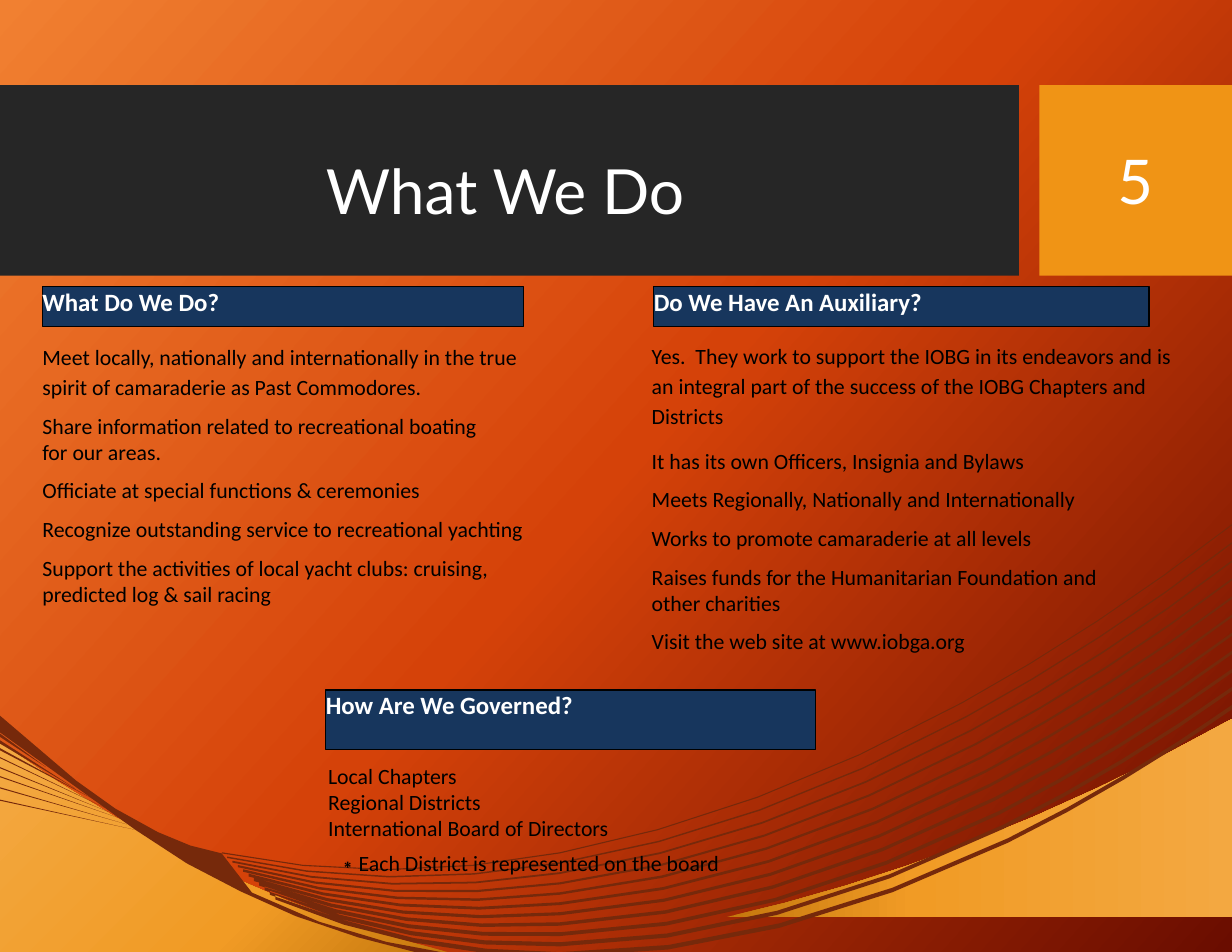
from copy import deepcopy

from lxml import etree
from pptx import Presentation
from pptx.dml.color import RGBColor
from pptx.enum.shapes import MSO_SHAPE
from pptx.enum.text import MSO_ANCHOR, MSO_AUTO_SIZE, PP_ALIGN
from pptx.oxml.ns import qn
from pptx.util import Cm, Pt

RECTANGLE = MSO_SHAPE.RECTANGLE
TOP, MIDDLE = MSO_ANCHOR.TOP, MSO_ANCHOR.MIDDLE
LEFT, CENTER = PP_ALIGN.LEFT, PP_ALIGN.CENTER
NO_AUTOFIT = MSO_AUTO_SIZE.NONE

COLORS = {
    "white": "FFFFFF", "black": "000000", "charcoal": "262626",
    "amber": "F09415", "navy": "17365D", "brown": "76290B",
}
BACKGROUND_STOPS = [(0, "F18031"), (0.5, "D54209"), (1, "6A0D00")]
CORNER_STOPS = [(0, "C4770D"), (0.37, "F19B25"), (1, "F3A841")]

# Wave points are in units of 2.54 cm.
WAVE_UNIT = Cm(2.54)
LEFT_CORNER = [(4.03, 8.51), (2.76, 8.2), (1.38, 7.62), (0, 6.63)]
RIGHT_CORNER = [(11, 6.42), (9.38, 7.32), (7.88, 7.88), (6.48, 8.19)]
WEDGE = [
    (0, 6.39), (0.68, 6.97), (1.03, 7.22), (1.41, 7.43), (1.7, 7.55),
    (1.98, 7.62), (2.25, 7.97), (2.85, 8.23), (3.45, 8.41), (4.04, 8.52),
    (3.78, 8.52), (3.2, 8.37), (2.64, 8.18), (2.15, 7.96), (1.67, 7.71),
    (1.21, 7.41), (0, 6.54),
]
# Top and bottom at the left edge, then the tip.
LEFT_STRANDS = [
    (6.55, 6.58, 0.41, 6.85), (6.61, 6.64, 0.67, 7.04),
    (6.68, 6.7, 0.86, 7.15), (6.76, 6.77, 0.93, 7.21),
    (6.85, 6.86, 0.97, 7.25), (6.93, 6.94, 1.05, 7.3),
    (7.03, 7.04, 1.13, 7.36), (7.14, 7.15, 1.21, 7.41),
]
HIGH_STRAND = [
    (1.98, 7.62), (2.93, 7.82), (3.95, 7.82), (5, 7.62), (6.15, 7.4),
    (7.36, 6.96), (8.59, 6.28), (9.39, 5.84), (10.2, 5.31), (11, 4.69),
]
LOW_STRAND = [
    (2.41, 7.99), (3.23, 8.32), (4.09, 8.47), (5, 8.45), (6.26, 8.43),
    (7.59, 8.07), (8.96, 7.4), (9.68, 7.04), (10.37, 6.62), (11, 6.17),
]
STRAND_COUNT = 11

HEADINGS = [
    ("What Do We Do?", (0.96, 6.5, 10.92, 0.91)),
    ("Do We Have An Auxiliary?", (14.83, 6.5, 11.23, 0.91)),
    ("How Are We Governed?", (7.39, 15.65, 11.1, 1.35)),
]
# Each line: text, line spacing, space before, then paragraph options.
ACTIVITIES = [
    ("Meet locally, nationally and internationally in the true spirit of "
     "camaraderie as Past Commodores.", 1.14, 0),
    ("Share information related to recreational boating for our areas.", 1, 8, {"right": 1.5}),
    ("Officiate at special functions & ceremonies", 1, 8),
    ("Recognize outstanding service to recreational yachting", 1, 8),
    ("Support the activities of local yacht clubs: cruising, predicted log "
     "& sail racing", 1, 8),
]
AUXILIARY = [
    ("Yes.  They work to support the IOBG in its endeavors and is an integral "
     "part of the success of the IOBG Chapters and Districts", 1.14, 0),
    ("It has its own Officers, Insignia and Bylaws", 1, 12),
    ("Meets Regionally, Nationally and Internationally", 1, 8),
    ("Works to promote camaraderie at all levels", 1, 8),
    ("Raises funds for the Humanitarian Foundation and other charities", 1, 8, {"right": 1.5}),
    ("Visit the web site at www.iobga.org", 1, 8),
]
GOVERNANCE = [
    ("Local Chapters", 1.25, 0),
    ("Regional Districts", 1, 0),
    ("International Board of Directors", 1, 0),
    ("Each District is represented on the board", 1.35, 0, {"bullet": "∗"}),
]


def curve(points, steps):
    """Sample a chain of cubic Bezier segments."""
    samples = [points[0]]
    for first in range(0, len(points) - 1, 3):
        a, b, c, d = points[first:first + 4]
        for step in range(1, steps + 1):
            t = step / steps
            u = 1 - t
            samples.append(tuple(
                u**3 * a[k] + 3 * u * u * t * b[k] + 3 * u * t * t * c[k] + t**3 * d[k]
                for k in (0, 1)))
    return samples


def right_strand(number):
    """Return a thin band between the high and low strands, thicker lower down."""
    share = number / 9
    lower = curve([
        (x + (low_x - x) * share, y + (low_y - y) * share)
        for (x, y), (low_x, low_y) in zip(HIGH_STRAND, LOW_STRAND)], 4)
    thickness = 0.01 + 0.003 * number
    return lower + [(x, y - thickness) for x, y in reversed(lower)]


class SlideBuilder:
    def __init__(self, presentation, layout):
        self.slide = presentation.slides.add_slide(layout)
        self.shapes = self.slide.shapes

    def style_font(self, paragraph, size, color, name="Calibri", bold=False):
        font = paragraph.font
        font.size, font.name, font.bold = Pt(size), name, bold
        font.color.rgb = RGBColor.from_string(COLORS[color])

    def gradient(self, fill, element, stops, angle):
        """Apply three stops; the angle runs clockwise in degrees."""
        fill.gradient()
        fill.gradient_angle = (360 - angle) % 360
        stop_list = element.find(".//" + qn("a:gsLst"))
        stop_list.append(deepcopy(stop_list[0]))
        for stop, (position, color) in zip(fill.gradient_stops, stops):
            stop.position = position
            stop.color.rgb = RGBColor.from_string(color)

    def outline(self, contours):
        builder = None
        for contour in contours:
            start, *rest = [(x * 1000, y * 1000) for x, y in contour]
            if builder is None:
                builder = self.shapes.build_freeform(*start, scale=WAVE_UNIT / 1000)
            else:
                builder.move_to(*start)
            builder.add_line_segments(rest, close=True)
        shape = builder.convert_to_shape()
        shape.shadow.inherit = False
        shape.line.fill.background()
        return shape

    def corner(self, points, angle):
        shape = self.outline([points])
        self.gradient(shape.fill, shape.element, CORNER_STOPS, angle)

    def strands(self, contours):
        fill = self.outline(contours).fill
        fill.solid()
        fill.fore_color.rgb = RGBColor.from_string(COLORS["brown"])

    def box(self, place, color, border=None):
        shape = self.shapes.add_shape(RECTANGLE, *map(Cm, place))
        shape.shadow.inherit = False
        shape.fill.solid()
        shape.fill.fore_color.rgb = RGBColor.from_string(COLORS[color])
        if border:
            shape.line.color.rgb = RGBColor.from_string(COLORS[border])
            shape.line.width = Pt(0.75)
        else:
            shape.line.fill.background()
        return shape

    def frame(self, shape, anchor, margin=None):
        frame = shape.text_frame
        frame.word_wrap, frame.auto_size, frame.vertical_anchor = True, NO_AUTOFIT, anchor
        if margin is not None:
            frame.margin_left = frame.margin_right = Cm(margin)
            frame.margin_top = frame.margin_bottom = Cm(margin)
        return frame

    def placeholder(self, index, place):
        """Move a placeholder into position, in front of the shapes drawn so far."""
        shape = self.slide.placeholders[index]
        shape.left, shape.top, shape.width, shape.height = map(Cm, place)
        shape.element.getparent().append(shape.element)
        return shape

    def large_text(self, shape, text, size):
        paragraph = self.frame(shape, MIDDLE).paragraphs[0]
        paragraph.text, paragraph.alignment = text, CENTER
        self.style_font(paragraph, size, "white", "Lato")

    def heading(self, text, place):
        paragraph = self.frame(self.box(place, "navy", "black"), TOP, 0).paragraphs[0]
        paragraph.text, paragraph.alignment = text, LEFT
        self.style_font(paragraph, 16, "white", bold=True)

    def text_list(self, index, place, lines):
        frame = self.frame(self.placeholder(index, place), TOP, 0)
        for number, (text, spacing, before, *options) in enumerate(lines):
            options = options[0] if options else {}
            paragraph = frame.add_paragraph() if number else frame.paragraphs[0]
            paragraph.text, paragraph.alignment = text, LEFT
            properties = paragraph._p.get_or_add_pPr()
            bullet = options.get("bullet")
            properties.set("marL", str(Cm(0.48 if bullet else 0)))
            properties.set("indent", str(Cm(-0.28 if bullet else 0)))
            properties.set("marR", str(Cm(options.get("right", 0))))
            if bullet:
                etree.SubElement(properties, qn("a:buFont")).set("typeface", "Arial")
                etree.SubElement(properties, qn("a:buChar")).set("char", bullet)
            else:
                etree.SubElement(properties, qn("a:buNone"))
            paragraph.line_spacing = spacing
            paragraph.space_before, paragraph.space_after = Pt(before), Pt(0)
            self.style_font(paragraph, 14, "black")


def main():
    presentation = Presentation()
    presentation.slide_width, presentation.slide_height = Cm(27.94), Cm(21.59)
    builder = SlideBuilder(presentation, presentation.slide_layouts.get_by_name("Comparison"))
    slide = builder.slide
    builder.gradient(slide.background.fill, slide.element, BACKGROUND_STOPS, 42)
    builder.corner(curve(LEFT_CORNER, 8) + [(0, 8.51)], 225)
    builder.corner(curve(RIGHT_CORNER, 8) + [(11, 8.19)], 0)
    builder.strands([WEDGE])
    builder.strands([[(0, top), tip, (0, bottom)] for top, bottom, *tip in LEFT_STRANDS])
    builder.strands([right_strand(number) for number in range(STRAND_COUNT)])
    builder.box((0, 1.93, 23.11, 4.32), "charcoal")
    builder.box((23.57, 1.93, 4.37, 4.32), "amber")
    builder.large_text(builder.placeholder(0, (0, 2.97, 22.91, 2.67)), "What We Do", 40)
    page_number = builder.shapes.add_textbox(*map(Cm, (23.98, 2.36, 3.53, 3.43)))
    builder.large_text(page_number, "5", 39.6)
    for text, place in HEADINGS:
        builder.heading(text, place)
    builder.text_list(1, (0.96, 7.72, 11.79, 6.43), ACTIVITIES)
    builder.text_list(2, (14.78, 7.7, 12.12, 7.67), AUXILIARY)
    builder.text_list(3, (7.44, 17.14, 11.2, 3.23), GOVERNANCE)
    unused = slide.placeholders[4].element
    unused.getparent().remove(unused)
    presentation.save("out.pptx")


if __name__ == "__main__":
    main()
